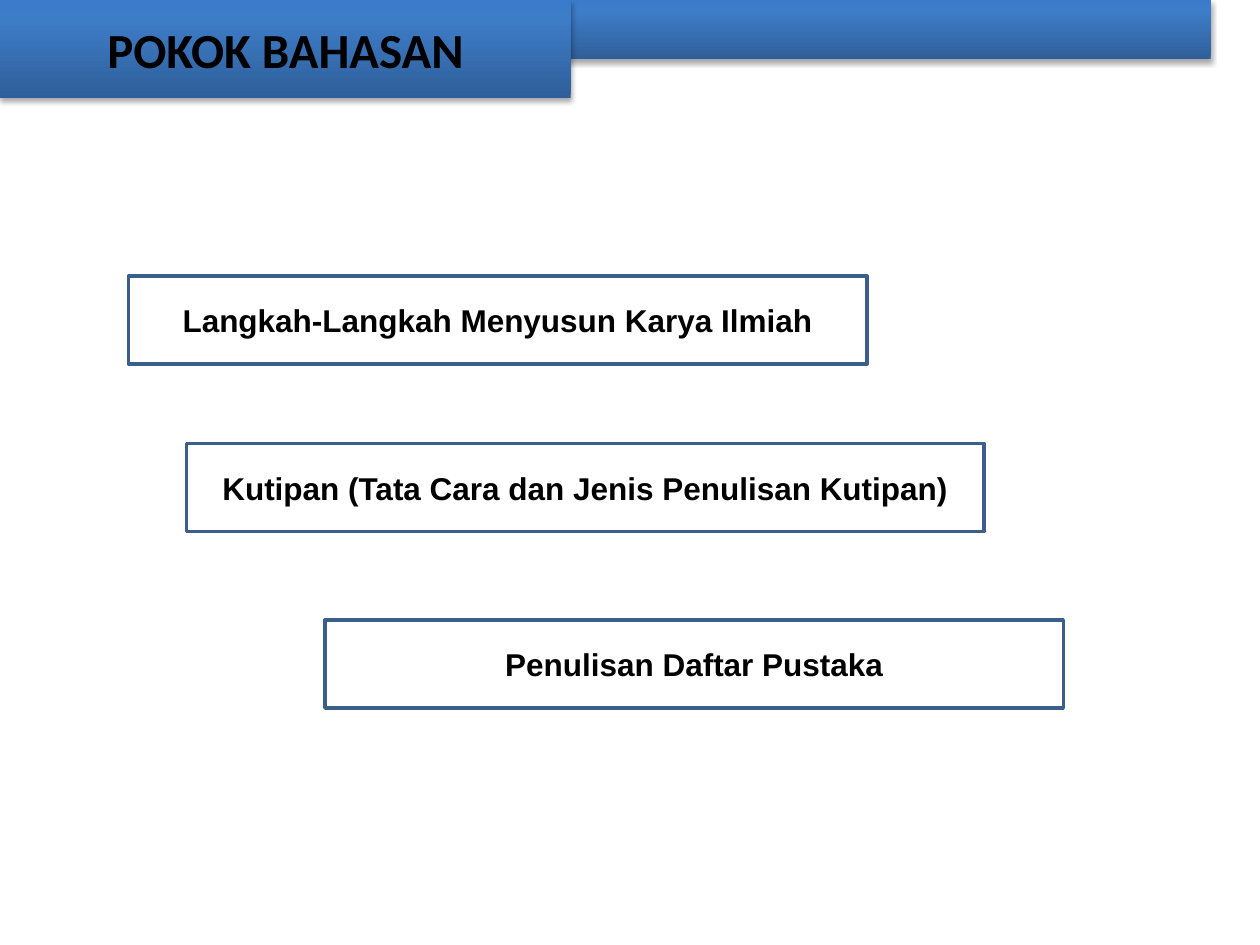
import copy

import pptx
import pptx.dml.color
import pptx.enum.shapes
import pptx.enum.text
import pptx.oxml
import pptx.oxml.ns
import pptx.util

Inches = pptx.util.Inches
GRADIENT = [(0, "2F5F99"), (0.8, "3D7CC7"), (1, "3A7CCB")]
TOPICS = [
    ("Langkah-Langkah Menyusun Karya Ilmiah", 1.02, 2.19, 5.86),
    ("Kutipan (Tata Cara dan Jenis Penulisan Kutipan)", 1.48, 3.52, 6.33),
    ("Penulisan Daftar Pustaka", 2.58, 4.92, 5.86),
]
TOPIC_HEIGHT = 0.7


def color(hex_value):
    """Return the RGB colour for a hex string."""
    return pptx.dml.color.RGBColor.from_string(hex_value)


def add_rectangle(slide, left, top, width, height):
    """Add a shadowless rectangle, measured in inches."""
    rectangle = slide.shapes.add_shape(
        pptx.enum.shapes.MSO_SHAPE.RECTANGLE,
        Inches(left), Inches(top), Inches(width), Inches(height))
    rectangle.shadow.inherit = False
    return rectangle


def write_centred(shape, text, font_name, size):
    """Write one bold black line in the middle of a shape."""
    frame = shape.text_frame
    frame.text = text
    frame.word_wrap = True
    frame.auto_size = pptx.enum.text.MSO_AUTO_SIZE.NONE
    frame.vertical_anchor = pptx.enum.text.MSO_ANCHOR.MIDDLE
    line = frame.paragraphs[0]
    line.alignment = pptx.enum.text.PP_ALIGN.CENTER
    line.font.name = font_name
    line.font.size = pptx.util.Pt(size)
    line.font.bold = True
    line.font.color.rgb = color("000000")


def style_banner(shape):
    """Give a header part its blue gradient and soft drop shadow."""
    shape.fill.gradient()
    shape.fill.gradient_angle = 90
    stop_list = shape.element.spPr.find(".//" + pptx.oxml.ns.qn("a:gsLst"))
    stop_list.append(copy.deepcopy(stop_list[-1]))
    for stop, (position, hex_value) in zip(shape.fill.gradient_stops, GRADIENT):
        stop.position = position
        stop.color.rgb = color(hex_value)
    shape.line.fill.background()
    shape.shadow.inherit = False
    effects = shape.element.spPr.find(pptx.oxml.ns.qn("a:effectLst"))
    effects.append(pptx.oxml.parse_xml(
        f'<a:outerShdw {pptx.oxml.ns.nsdecls("a")} blurRad="{pptx.util.Pt(3.1)}" '
        f'dist="{pptx.util.Pt(1.8)}" dir="5400000" rotWithShape="0">'
        '<a:srgbClr val="000000"><a:alpha val="35000"/></a:srgbClr></a:outerShdw>'))


def build_header(slide, left, top, width, height):
    """Place the title tab over the thinner header bar."""
    bar = add_rectangle(slide, left + 0.31, top, width - 0.31, 0.47)
    title = slide.shapes.title
    title.element.addprevious(bar.element)
    title.left, title.top = Inches(left), Inches(top)
    title.width, title.height = Inches(4.53), Inches(height)
    for part in (bar, title):
        style_banner(part)
    write_centred(title, "POKOK BAHASAN", "Calibri", 28)


def build_topic(slide, topic, left, top, width, height):
    """Place one outlined topic box."""
    box = add_rectangle(slide, left, top, width, height)
    box.fill.solid()
    box.fill.fore_color.rgb = color("FFFFFF")
    box.line.color.rgb = color("3A5F8C")
    box.line.width = pptx.util.Pt(2)
    write_centred(box, topic, "Arial", 18)


def main():
    """Build and save the topic overview slide."""
    deck = pptx.Presentation()
    deck.slide_width, deck.slide_height = Inches(10), Inches(7.5)
    slide = deck.slides.add_slide(deck.slide_layouts.get_by_name("Title Only"))
    build_header(slide, 0, 0, 9.61, 0.78)
    for topic, left, top, width in TOPICS:
        build_topic(slide, topic, left, top, width, TOPIC_HEIGHT)
    deck.save("out.pptx")


if __name__ == "__main__":
    main()
